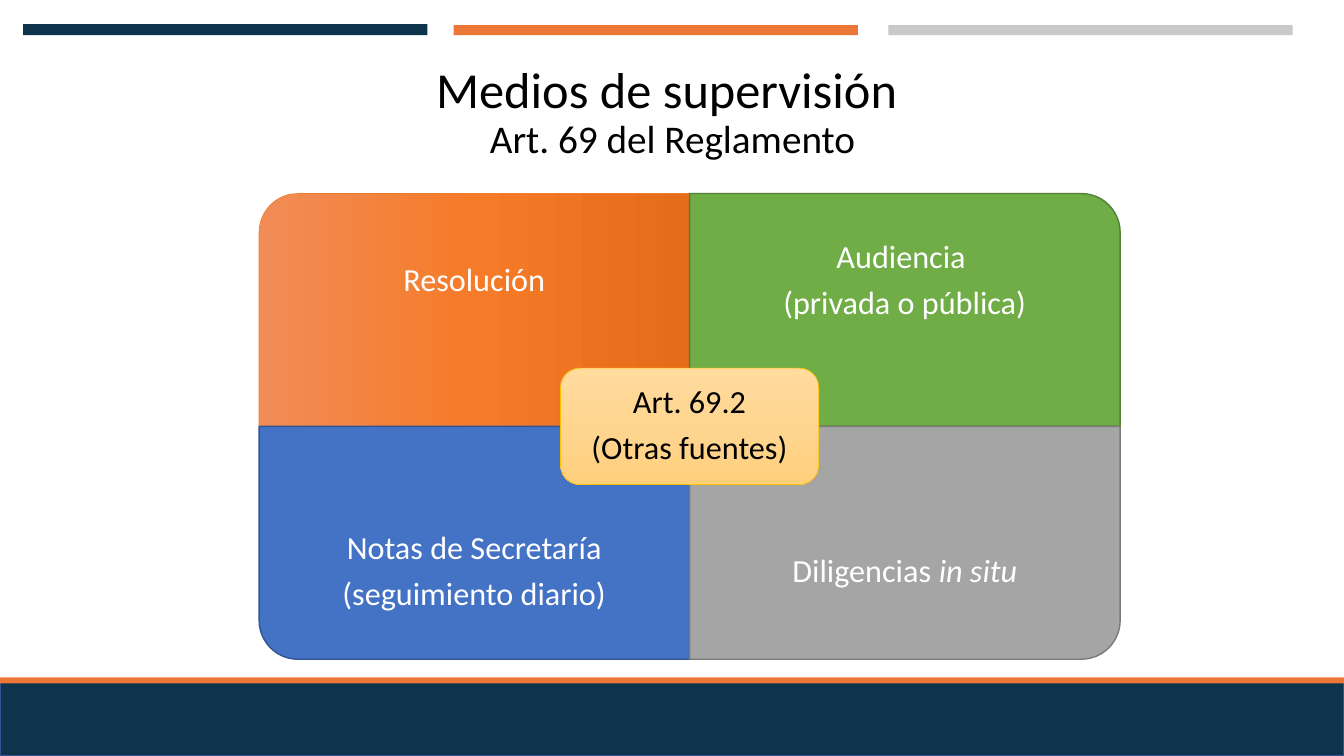
import copy
import pptx
import pptx.dml.color
import pptx.enum.shapes
import pptx.enum.text
import pptx.oxml.ns
import pptx.util

SHAPES = pptx.enum.shapes.MSO_SHAPE
WIDTH, HEIGHT = 13.33, 7.5

# Content: lines of text, each a list of (words, format) spans
WHITE = {"size": 23, "color": "FFFFFF"}
BLACK = {"size": 23, "color": "000000"}
TITLE = [("Medios de supervisión ", {"size": 36, "color": "000000"}),
         ("Art. 69 del Reglamento", {"size": 28, "color": "000000"})]
# column, row, rotation, fill (one colour or a gradient), line, line width, lines
PANELS = [
    (0, 0, 270, ["F18C57", "F67B28", "E56C19"], "ED7D31", 0.5,
     [[("Resolución", WHITE)]]),
    (1, 0, 0, "70AD47", "538035", 1,
     [[("Audiencia ", WHITE)], [("(privada o pública)", WHITE)]]),
    (0, 1, 180, "4472C4", "325491", 1,
     [[("Notas de Secretaría", WHITE)], [("(seguimiento diario)", WHITE)]]),
    (1, 1, 90, "A5A5A5", "7A7A7A", 1,
     [[("Diligencias ", WHITE), ("in situ", {**WHITE, "italic": True})]]),
]
CENTRE_FILL = ["FFDB9E", "FFD590", "FFD07C"]
CENTRE_LINES = [[("Art. 69.2", BLACK)], [("(Otras fuentes)", BLACK)]]
# left, top, width, height, fill, line
BARS = [
    (0.23, 0.24, 4.01, 0.11, "0D334D", None),
    (4.5, 0.25, 4.01, 0.1, "ED7736", None),
    (8.81, 0.25, 4.01, 0.1, "C9C9C9", None),
    (0, 6.77, WIDTH, 0.73, "0D334D", "325491"),
    (0, 6.72, WIDTH, 0.06, "ED7736", None),
]

# Grid of the four panels
GRID_LEFT, GRID_TOP = 2.57, 1.92
PANEL_W, PANEL_H = 4.27, 2.31
TEXT_H = PANEL_H * 0.75
CENTRE_W, CENTRE_H = PANEL_W * 0.6, PANEL_H * 0.5

deck = pptx.Presentation()
deck.slide_width = pptx.util.Inches(WIDTH)
deck.slide_height = pptx.util.Inches(HEIGHT)
page = deck.slides.add_slide(deck.slide_layouts[6])


def rgb(value):
    return pptx.dml.color.RGBColor.from_string(value)


def inches(*lengths):
    return [pptx.util.Inches(length) for length in lengths]


def paint(shape, fill):
    if isinstance(fill, str):
        shape.fill.solid()
        shape.fill.fore_color.rgb = rgb(fill)
        return
    shape.fill.gradient()
    shape.fill.gradient_angle = 270
    first = next(shape.element.iter(pptx.oxml.ns.qn("a:gs")))
    first.addnext(copy.deepcopy(first))
    for index, (stop, color) in enumerate(zip(shape.fill.gradient_stops, fill)):
        stop.position = index / (len(fill) - 1)
        stop.color.rgb = rgb(color)


def add_block(kind, place, fill, line=None, weight=1, rotation=0):
    shape = page.shapes.add_shape(kind, *inches(*place))
    shape.shadow.inherit = False
    shape.rotation = rotation
    paint(shape, fill)
    if line:
        shape.line.color.rgb = rgb(line)
        shape.line.width = pptx.util.Pt(weight)
    else:
        shape.line.fill.background()
    return shape


def prepare_frame(frame, across, down):
    frame.word_wrap = True
    frame.vertical_anchor = pptx.enum.text.MSO_ANCHOR.MIDDLE
    frame.margin_left = frame.margin_right = pptx.util.Inches(across)
    frame.margin_top = frame.margin_bottom = pptx.util.Inches(down)


def format_para(para, after):
    para.alignment = pptx.enum.text.PP_ALIGN.CENTER
    para.line_spacing = 0.9
    para.space_after = pptx.util.Pt(after)


def add_span(para, words, style):
    span = para.add_run()
    span.text = words
    values = {"name": "Calibri", "size": pptx.util.Pt(style["size"]),
              "italic": style.get("italic")}
    for name, value in values.items():
        setattr(span.font, name, value)
    span.font.color.rgb = rgb(style["color"])


def write_lines(frame, lines, margin):
    prepare_frame(frame, margin, margin)
    for index, spans in enumerate(lines):
        para = frame.add_paragraph() if index else frame.paragraphs[0]
        format_para(para, 8)
        for words, style in spans:
            add_span(para, words, style)


# Title
title = page.shapes.add_textbox(*inches(0.92, 0.4, 11.5, 1.45)).text_frame
prepare_frame(title, 0.1, 0.05)
heading = title.paragraphs[0]
format_para(heading, 0)
for number, (words, style) in enumerate(TITLE):
    if number:
        heading.add_line_break()
    add_span(heading, words, style)

# Four panels, each turned so that its round corner points outwards
for column, row, rotation, fill, line, weight, lines in PANELS:
    left, top = GRID_LEFT + column * PANEL_W, GRID_TOP + row * PANEL_H
    wide, high = (PANEL_H, PANEL_W) if rotation % 180 else (PANEL_W, PANEL_H)
    place = (left + (PANEL_W - wide) / 2, top + (PANEL_H - high) / 2, wide, high)
    add_block(SHAPES.ROUND_1_RECTANGLE, place, fill, line, weight, rotation)
    text_top = top + row * (PANEL_H - TEXT_H)
    box = page.shapes.add_textbox(*inches(left, text_top, PANEL_W, TEXT_H))
    write_lines(box.text_frame, lines, 0.18)

# Centre label
centre = add_block(
    SHAPES.ROUNDED_RECTANGLE,
    (GRID_LEFT + PANEL_W - CENTRE_W / 2, GRID_TOP + PANEL_H - CENTRE_H / 2,
     CENTRE_W, CENTRE_H),
    CENTRE_FILL, "FFC000", 0.5)
write_lines(centre.text_frame, CENTRE_LINES, 0.1)

# Bars at the top and the foot
for *place, fill, line in BARS:
    add_block(SHAPES.RECTANGLE, place, fill, line)

deck.save("out.pptx")
